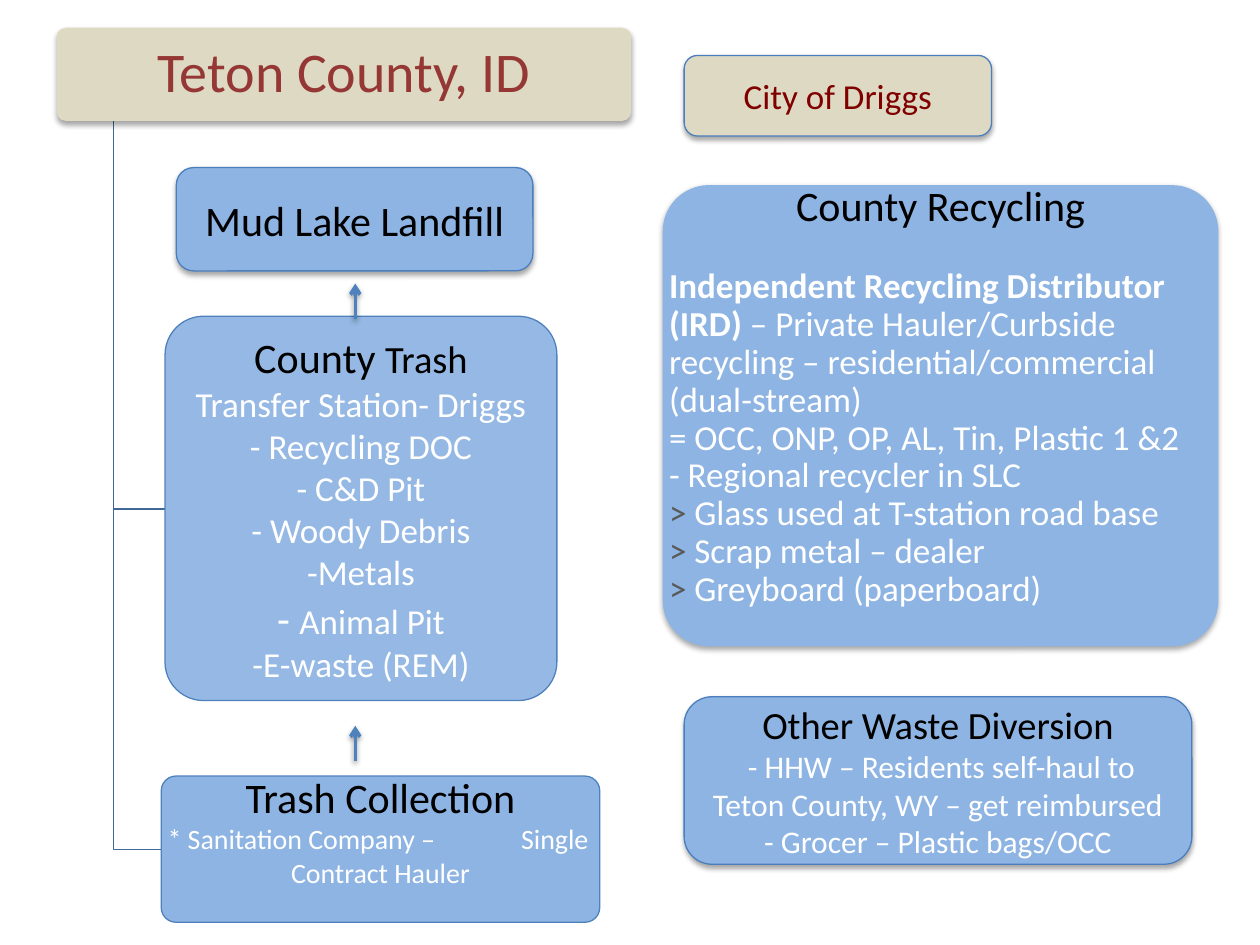
"""Build the Teton County waste flow slide."""
from lxml.etree import SubElement
from pptx import Presentation
from pptx.dml.color import RGBColor
from pptx.enum.shapes import MSO_CONNECTOR, MSO_SHAPE
from pptx.enum.text import MSO_ANCHOR, PP_ALIGN
from pptx.oxml.ns import qn
from pptx.util import Inches, Pt

COLORS = {
    "tan": "DDD9C3", "blue": "8EB4E3", "edge": "4F81BD", "rim": "4B7EBC",
    "branch": "3F6797", "title": "953735", "maroon": "800000",
    "black": "000000", "white": "FFFFFF", "gray": "595959",
}
CENTER, LEFT = PP_ALIGN.CENTER, PP_ALIGN.LEFT


def line(*runs, align=CENTER, spacing=1.0, after=0, tab=None):
    return {"runs": runs, "align": align, "spacing": spacing, "after": after, "tab": tab}


def white(text, size=20, **fmt):
    return line((text, size, "white"), **fmt)


def left(*runs, **fmt):
    return line(*runs, align=LEFT, spacing=0.9, **fmt)


def bullet(text):
    return left((">", 20, "gray"), (" " + text, 20, "white"))


TITLE = [line(("Teton County, ID", 32, "title"), spacing=0.9)]
TRASH = [
    line(("County ", 24, "black"), ("Trash", 22, "black")),
    *[white(t) for t in ("Transfer Station- Driggs", "- Recycling DOC", "- C&D Pit",
                         "- Woody Debris", "-Metals")],
    line(("- ", 24, "white"), ("Animal Pit", 20, "white")),
    white("-E-waste (REM)"),
]
COLLECTION = [
    line(("Trash Collection", 24, "black")),
    white("* Sanitation Company –\tSingle", 16, align=LEFT, tab=3.34),
    white("Contract Hauler", 16),
]
RECYCLING = [
    line(("County Recycling", 24, "black"), spacing=0.9, after=22),
    left(("Independent Recycling Distributor (IRD) ", 20, "white", True),
         ("– Private Hauler/Curbside recycling – residential/commercial (dual-stream)",
          20, "white")),
    left(("= OCC, ONP, OP, AL, Tin, Plastic 1 &2", 20, "white")),
    left(("- Regional recycler in SLC", 20, "white")),
    *[bullet(t) for t in ("Glass used at T-station road base", "Scrap metal – dealer",
                          "Greyboard (paperboard)")],
]
DIVERSION = [
    line(("Other Waste Diversion", 22, "black")),
    white(" - HHW – Residents self-haul to Teton County, WY – get reimbursed", 18),
    white("- Grocer – Plastic bags/OCC", 18),
]

PANELS = [
    {"at": (0.45, 0.22, 4.56, 0.74), "lines": TITLE, "fill": "tan", "shadow": True,
     "insets": (0.07, 0.04, 0.07, 0.04)},
    {"at": (1.31, 2.51, 3.11, 3.05), "lines": TRASH, "edge": "edge", "alpha": 93},
    {"at": (1.28, 6.16, 3.48, 1.16), "lines": COLLECTION, "edge": "edge",
     "insets": (0.05, 0.03, 0.05, 0.33)},
    {"at": (5.26, 1.47, 4.41, 3.66), "lines": RECYCLING, "shadow": True,
     "insets": (0.05, 0.03, 0.05, 0.33)},
]
BOXES = [
    {"at": (1.4, 1.33, 2.83, 0.82), "lines": [line(("Mud Lake Landfill", 24, "black"))]},
    {"at": (5.43, 5.53, 4.03, 1.33), "lines": DIVERSION},
    {"at": (5.43, 0.44, 2.44, 0.64), "fill": "tan",
     "lines": [line(("City of Driggs", 20, "maroon"))]},
]
TRUNK = (0.9, 0.96)
BRANCHES = [(1.31, 4.04), (1.28, 6.74)]
ARROW_X, ARROW_LENGTH, ARROW_STARTS = 2.82, 0.28, (6.04, 2.53)


def rgb(name):
    return RGBColor.from_string(COLORS[name])


def add_shadow(effects, alpha=35, dist=1.8):
    shadow = SubElement(effects, qn("a:outerShdw"), blurRad=str(Pt(3.1)),
                        dist=str(Pt(dist)), dir="5400000", rotWithShape="0")
    color = SubElement(shadow, qn("a:srgbClr"), val=COLORS["black"])
    SubElement(color, qn("a:alpha"), val=str(alpha * 1000))


def write(sp, lines, insets=(0.1, 0.05, 0.1, 0.05)):
    tf = sp.text_frame
    tf.word_wrap = True
    tf.vertical_anchor = MSO_ANCHOR.MIDDLE
    tf.margin_left, tf.margin_top, tf.margin_right, tf.margin_bottom = map(Inches, insets)
    for i, item in enumerate(lines):
        p = tf.add_paragraph() if i else tf.paragraphs[0]
        p.alignment, p.line_spacing = item["align"], item["spacing"]
        p.space_after = Pt(item["after"])
        if item["tab"]:
            tabs = SubElement(p._p.get_or_add_pPr(), qn("a:tabLst"))
            SubElement(tabs, qn("a:tab"), pos=str(Inches(item["tab"])), algn="r")
        for text, size, color, *bold in item["runs"]:
            r = p.add_run()
            r.text = text
            r.font.name, r.font.size, r.font.bold = "Calibri", Pt(size), bool(bold)
            r.font.color.rgb = rgb(color)


def add_box(shapes, at, fill="blue", edge=None, adj=None, shadow=False, alpha=None):
    sp = shapes.add_shape(MSO_SHAPE.ROUNDED_RECTANGLE, *map(Inches, at))
    if adj:
        sp.adjustments[0] = adj
    sp.fill.solid()
    sp.fill.fore_color.rgb = rgb(fill)
    if alpha:
        color = sp._element.spPr.find(qn("a:solidFill")).find(qn("a:srgbClr"))
        SubElement(color, qn("a:alpha"), val=str(alpha * 1000))
    if edge:
        sp.line.color.rgb = rgb(edge)
        sp.line.width = Pt(0.75)
    else:
        sp.line.fill.background()
    sp.shadow.inherit = False
    if shadow:
        add_shadow(sp._element.spPr.find(qn("a:effectLst")))
    return sp


def add_panel(shapes, at, lines, insets=(0.05, 0.03, 0.05, 0.03), **look):
    add_box(shapes, at, adj=0.1, **look)
    write(shapes.add_textbox(*map(Inches, at)), lines, insets)


def add_branch(shapes, x, y):
    start_x, start_y = map(Inches, TRUNK)
    builder = shapes.build_freeform(start_x, start_y)
    builder.add_line_segments([(start_x, Inches(y)), (Inches(x), Inches(y))], close=False)
    sp = builder.convert_to_shape()
    sp.fill.background()
    sp.line.color.rgb = rgb("branch")
    sp.line.width = Pt(0.75)
    sp.shadow.inherit = False


def add_arrow(shapes, y):
    x = Inches(ARROW_X)
    cxn = shapes.add_connector(MSO_CONNECTOR.STRAIGHT, x, Inches(y),
                               x, Inches(y - ARROW_LENGTH))
    cxn.line.color.rgb = rgb("edge")
    cxn.line.width = Pt(2)
    SubElement(cxn.line._get_or_add_ln(), qn("a:tailEnd"), type="arrow")
    add_shadow(SubElement(cxn._element.spPr, qn("a:effectLst")), alpha=38, dist=1.6)


def main():
    prs = Presentation()
    prs.slide_width, prs.slide_height = Inches(10), Inches(7.5)
    s = prs.slides.add_slide(prs.slide_layouts[6])
    for branch in BRANCHES:
        add_branch(s.shapes, *branch)
    for panel in PANELS:
        add_panel(s.shapes, **panel)
    for box in BOXES:
        sp = add_box(s.shapes, box["at"], box.get("fill", "blue"), "rim", shadow=True)
        write(sp, box["lines"])
    for y in ARROW_STARTS:
        add_arrow(s.shapes, y)
    prs.save("out.pptx")


if __name__ == "__main__":
    main()
